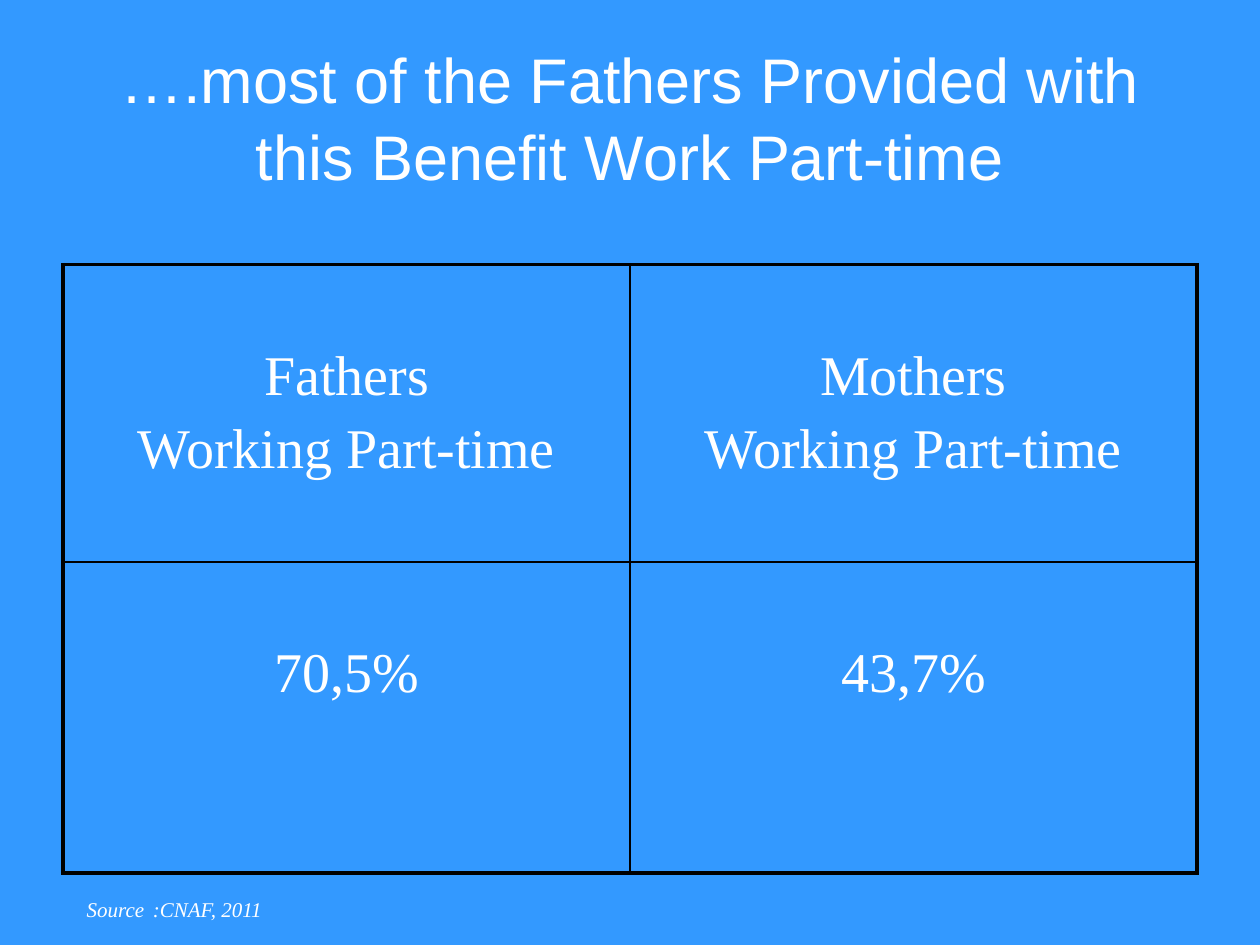
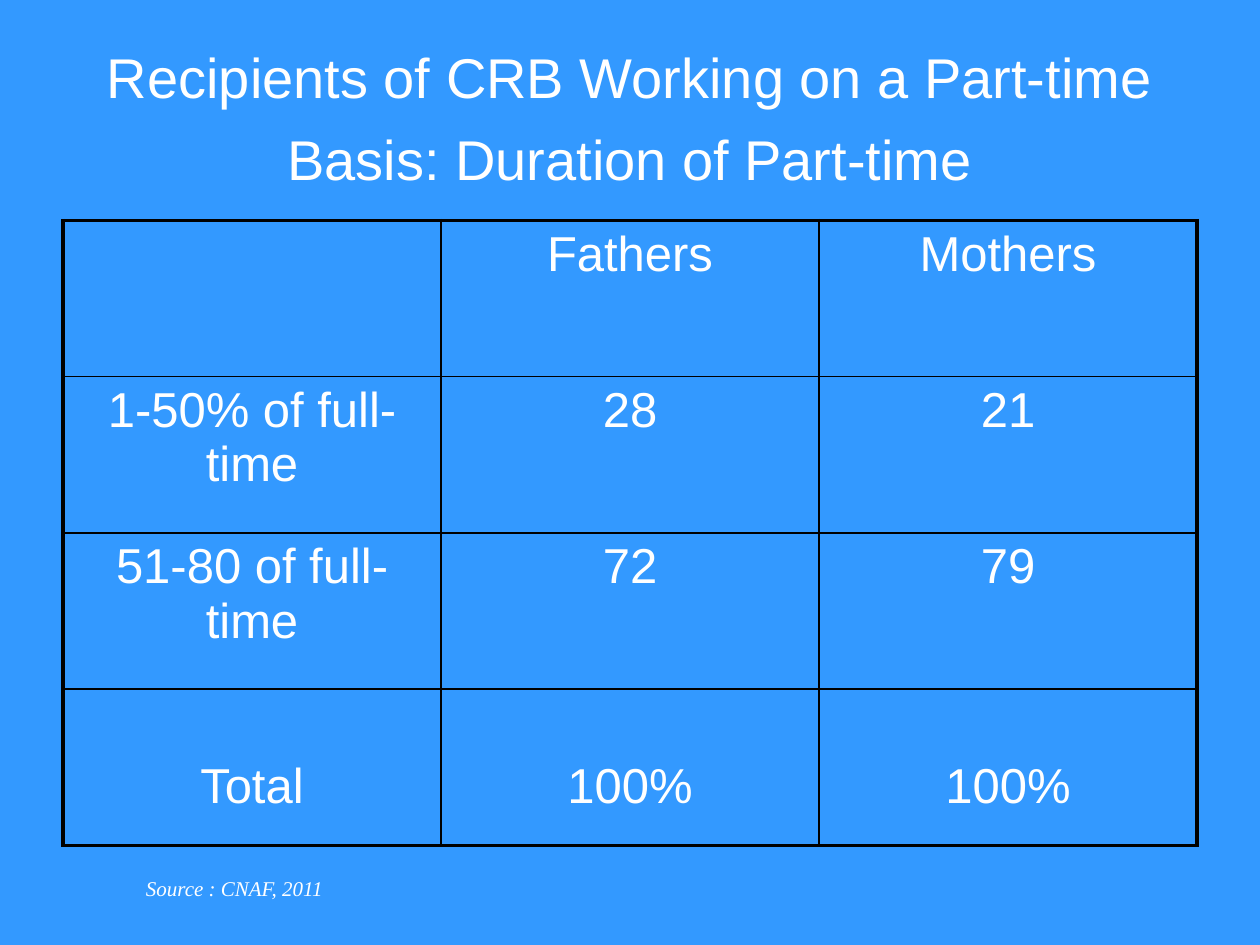
from pptx import Presentation
from pptx import util as u
from pptx.dml.color import RGBColor
from pptx.enum import text
from pptx.oxml.ns import qn
from lxml import etree

COLORS = {"background": "3399FF", "text": "FFFFFF", "border": "000000"}
SANS, SERIF = "Arial", "Times New Roman"
LEFT, WIDTH = 0.5, 9
OUTER_LINE, INNER_LINE = 2.25, 1


def color(name):
    """Return the named palette colour."""
    return RGBColor.from_string(COLORS[name])


def style_run(run, font_name, size, italic=False):
    """Format a run in the shared text colour."""
    run.font.name = font_name
    run.font.size = u.Pt(size)
    run.font.italic = italic
    run.font.color.rgb = color("text")


def add_slide(presentation):
    """Add a blank slide with the shared background."""
    slide = presentation.slides.add_slide(presentation.slide_layouts[6])
    slide.background.fill.solid()
    slide.background.fill.fore_color.rgb = color("background")
    return slide


def add_text_frame(slide, left, top, width, height):
    """Add a wrapping text box and return its middle-anchored frame."""
    box = slide.shapes.add_textbox(*map(u.Inches, (left, top, width, height)))
    box.text_frame.word_wrap = True
    box.text_frame.vertical_anchor = text.MSO_ANCHOR.MIDDLE
    return box.text_frame


def add_title(slide, title, size, line_height, margin_bottom=0.05):
    """Add the centred title above the table."""
    frame = add_text_frame(slide, LEFT, 0.3, WIDTH, 1.25)
    frame.margin_bottom = u.Inches(margin_bottom)
    frame.text = title
    paragraph = frame.paragraphs[0]
    paragraph.alignment = text.PP_ALIGN.CENTER
    paragraph.line_spacing = u.Pt(line_height)
    style_run(paragraph.runs[0], SANS, size)


def add_source(slide, place, parts):
    """Add the italic source note, with any lone space set larger."""
    paragraph = add_text_frame(slide, *place).paragraphs[0]
    for part in parts:
        run = paragraph.add_run()
        run.text = part
        if part == " ":
            style_run(run, SANS, 18)
        else:
            style_run(run, SERIF, 12, italic=True)


def set_borders(cell, on_edge):
    """Draw thick lines on the table's edge and thin lines inside."""
    properties = cell._tc.get_or_add_tcPr()
    for side in "LRTB":
        points = OUTER_LINE if on_edge[side] else INNER_LINE
        line = etree.SubElement(properties, qn(f"a:ln{side}"), w=str(u.Pt(points)))
        fill = etree.SubElement(line, qn("a:solidFill"))
        etree.SubElement(fill, qn("a:srgbClr"), val=COLORS["border"])


def fill_cell(cell, content, font_name, size, top_gap):
    """Write centred text in a cell, lowered by the given gap."""
    cell.fill.background()
    cell.margin_top = u.Inches(top_gap)
    cell.text_frame.text = content
    for index, paragraph in enumerate(cell.text_frame.paragraphs):
        paragraph.alignment = text.PP_ALIGN.CENTER
        if index:
            paragraph.space_before = u.Pt(size * 0.2)
        for run in paragraph.runs:
            style_run(run, font_name, size)


def add_grid(slide, top, rows, row_heights, top_gaps, font_name, size):
    """Add an unfilled table with equal columns."""
    column_count = len(rows[0])
    table = slide.shapes.add_table(
        len(rows), column_count, u.Inches(LEFT), u.Inches(top),
        u.Inches(WIDTH), u.Inches(sum(row_heights))).table
    table.first_row = table.horz_banding = False
    for column in table.columns:
        column.width = u.Inches(WIDTH / column_count)
    for r, contents in enumerate(rows):
        table.rows[r].height = u.Inches(row_heights[r])
        for c, content in enumerate(contents):
            cell = table.cell(r, c)
            set_borders(cell, {"L": c == 0, "R": c == column_count - 1,
                               "T": r == 0, "B": r == len(rows) - 1})
            fill_cell(cell, content, font_name, size, top_gaps[r])


def add_share_slide(presentation):
    """Build the slide on the share of parents working part-time."""
    slide = add_slide(presentation)
    add_title(slide, "….most of the Fathers Provided with this Benefit "
                     "Work Part-time", 36, 43.5)
    rows = [[f"{parent}\nWorking Part-time" for parent in ("Fathers", "Mothers")],
            ["70,5%", "43,7%"]]
    add_grid(slide, 2.1, rows, [2.36, 2.47], [0.64, 0.64], SERIF, 32)
    add_source(slide, (0.59, 6.98, 3.23, 0.4), ["Source", " ", ":CNAF, 2011"])


def add_duration_slide(presentation):
    """Build the slide on the duration of part-time work."""
    slide = add_slide(presentation)
    add_title(slide, "Recipients of CRB Working on a Part-time Basis: "
                     "Duration of Part-time", 32, 46.8, margin_bottom=0.16)
    rows = [["", "Fathers", "Mothers"],
            ["1-50% of full-time", "28", "21"],
            ["51-80 of full-time", "72", "79"],
            ["Total", "100%", "100%"]]
    add_grid(slide, 1.75, rows, [1.24] * 4, [0.05, 0.05, 0.05, 0.56], SANS, 28)
    add_source(slide, (1.06, 6.9, 1.65, 0.3), ["Source : CNAF, 2011"])


def main():
    """Build and save the presentation."""
    presentation = Presentation()
    presentation.slide_width = u.Inches(10)
    presentation.slide_height = u.Inches(7.5)
    add_share_slide(presentation)
    add_duration_slide(presentation)
    presentation.save("out.pptx")


if __name__ == "__main__":
    main()
